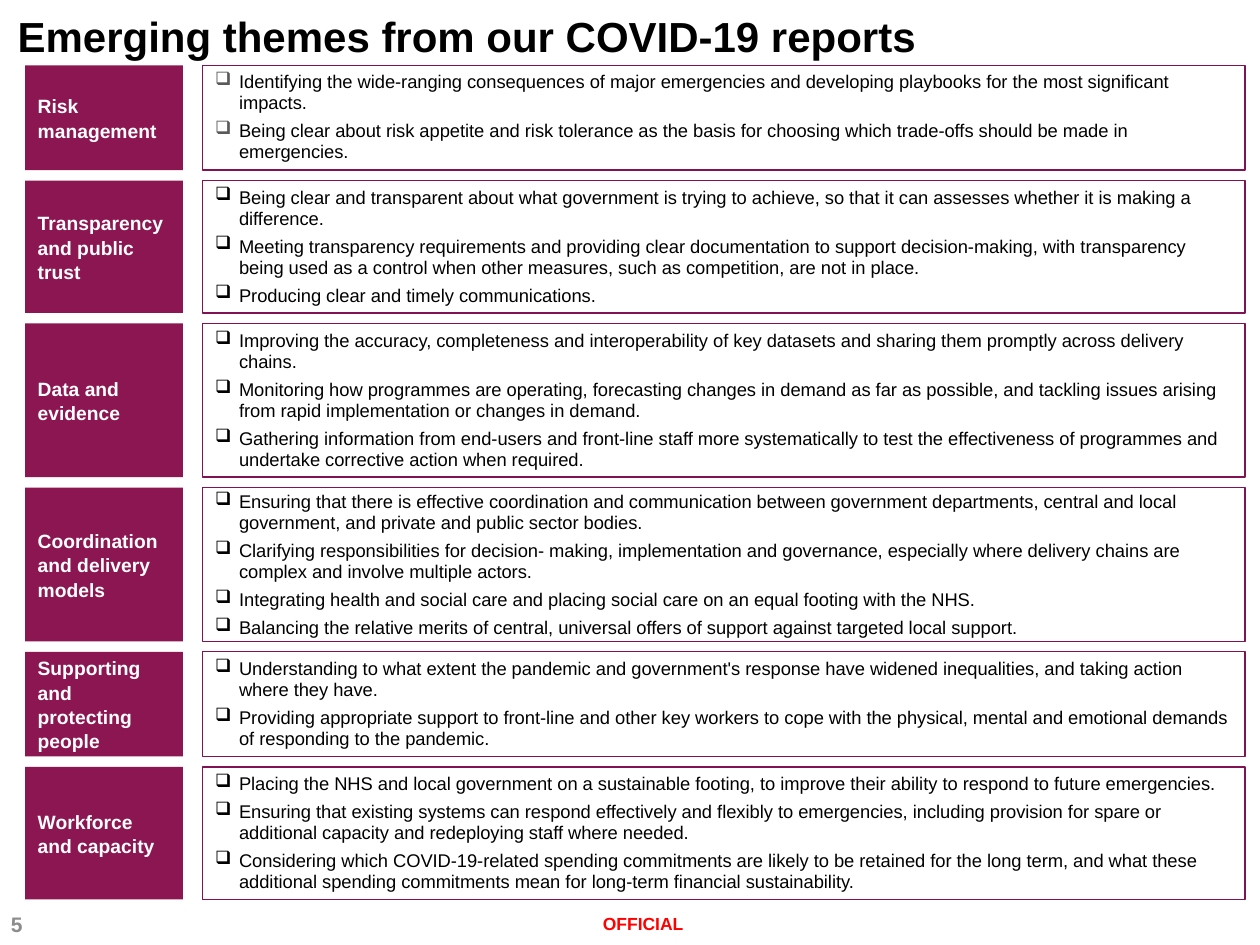
import pptx
import pptx.dml.color
import pptx.enum.shapes
import pptx.enum.text
import pptx.oxml
import pptx.oxml.ns
import pptx.util
from pptx.util import Cm

PLUM = "8C1651"
BORDER = "7F1355"
GREY = "595959"
ANCHOR = pptx.enum.text.MSO_ANCHOR
ALIGN = pptx.enum.text.PP_ALIGN

# Theme, row height in cm, vertical anchor, bullet colour, points
THEMES = [
    ("Risk management", 2.11, ANCHOR.TOP, GREY, [
        "Identifying the wide-ranging consequences of major emergencies and developing playbooks for the most significant impacts.",
        "Being clear about risk appetite and risk tolerance as the basis for choosing which trade-offs should be made in emergencies.",
    ]),
    ("Transparency and public trust", 2.67, ANCHOR.TOP, "000000", [
        "Being clear and transparent about what government is trying to achieve, so that it can assesses whether it is making a difference.",
        "Meeting transparency requirements and providing clear documentation to support decision-making, with transparency being used as a control when other measures, such as competition, are not in place.",
        "Producing clear and timely communications.",
    ]),
    ("Data and evidence", 3.1, ANCHOR.MIDDLE, "000000", [
        "Improving the accuracy, completeness and interoperability of key datasets and sharing them promptly across delivery chains.",
        "Monitoring how programmes are operating, forecasting changes in demand as far as possible, and tackling issues arising from rapid implementation or changes in demand.",
        "Gathering information from end-users and front-line staff more systematically to test the effectiveness of programmes and undertake corrective action when required.",
    ]),
    ("Coordination and delivery models", 3.1, ANCHOR.MIDDLE, "000000", [
        "Ensuring that there is effective coordination and communication between government departments, central and local government, and private and public sector bodies.",
        "Clarifying responsibilities for decision- making, implementation and governance, especially where delivery chains are complex and involve multiple actors.",
        "Integrating health and social care and placing social care on an equal footing with the NHS.",
        "Balancing the relative merits of central, universal offers of support against targeted local support.",
    ]),
    ("Supporting and protecting people", 2.11, ANCHOR.MIDDLE, "000000", [
        "Understanding to what extent the pandemic and government's response have widened inequalities, and taking action where they have.",
        "Providing appropriate support to front-line and other key workers to cope with the physical, mental and emotional demands of responding to the pandemic.",
    ]),
    ("Workforce and capacity", 2.67, ANCHOR.TOP, "000000", [
        "Placing the NHS and local government on a sustainable footing, to improve their ability to respond to future emergencies.",
        "Ensuring that existing systems can respond effectively and flexibly to emergencies, including provision for spare or additional capacity and redeploying staff where needed.",
        "Considering which COVID-19-related spending commitments are likely to be retained for the long term, and what these additional spending commitments mean for long-term financial sustainability.",
    ]),
]


def color(hex_string):
    return pptx.dml.color.RGBColor.from_string(hex_string)


def add_run(paragraph, text, size, hex_string, bold=False):
    run = paragraph.add_run()
    run.text = text
    run.font.name = "Arial"
    run.font.size = pptx.util.Pt(size)
    run.font.bold = bold
    run.font.color.rgb = color(hex_string)


def add_bullet(paragraph, hex_string):
    properties = paragraph._p.get_or_add_pPr()
    properties.set("marL", str(Cm(0.48)))
    properties.set("indent", str(-Cm(0.48)))
    namespace = pptx.oxml.ns.nsdecls("a")
    for xml in (
        f'<a:buClr {namespace}><a:srgbClr val="{hex_string}"/></a:buClr>',
        f'<a:buChar {namespace} char="❑"/>',
    ):
        properties.append(pptx.oxml.parse_xml(xml))


def add_rectangle(slide, left, top, width, height, anchor):
    shape = slide.shapes.add_shape(
        pptx.enum.shapes.MSO_SHAPE.RECTANGLE, Cm(left), Cm(top), Cm(width), Cm(height))
    shape.shadow.inherit = False
    shape.text_frame.word_wrap = True
    shape.text_frame.vertical_anchor = anchor
    return shape


def add_title(slide, left, top, width, height):
    title = slide.shapes.title
    title.left, title.top, title.width, title.height = Cm(left), Cm(top), Cm(width), Cm(height)
    frame = title.text_frame
    frame.auto_size = pptx.enum.text.MSO_AUTO_SIZE.NONE
    frame.vertical_anchor = ANCHOR.TOP
    frame.margin_top = Cm(0.22)
    paragraph = frame.paragraphs[0]
    paragraph.alignment = ALIGN.LEFT
    add_run(paragraph, "Emerging themes from our COVID-19 reports", 24, "000000", bold=True)


def add_theme_label(slide, left, top, width, height, text):
    shape = add_rectangle(slide, left, top, width, height, ANCHOR.MIDDLE)
    shape.fill.solid()
    shape.fill.fore_color.rgb = color(PLUM)
    shape.line.fill.background()
    paragraph = shape.text_frame.paragraphs[0]
    paragraph.alignment = ALIGN.LEFT
    paragraph.line_spacing = 1.05
    add_run(paragraph, text, 11, "FFFFFF", bold=True)


def add_theme_points(slide, left, top, width, height, anchor, bullet_color, points):
    shape = add_rectangle(slide, left, top, width, height, anchor)
    shape.fill.background()
    shape.line.color.rgb = color(BORDER)
    shape.line.width = pptx.util.Pt(0.75)
    frame = shape.text_frame
    for index, point in enumerate(points):
        paragraph = frame.add_paragraph() if index else frame.paragraphs[0]
        add_bullet(paragraph, bullet_color)
        paragraph.alignment = ALIGN.LEFT
        paragraph.line_spacing = pptx.util.Pt(12)
        paragraph.space_before = pptx.util.Pt(2 if index else 0)
        paragraph.space_after = pptx.util.Pt(2)
        add_run(paragraph, point, 10.5, "000000")


def add_themes(slide, left, top, width, label_width=3.18, column_gap=0.4, row_gap=0.21):
    points_left = left + label_width + column_gap
    points_width = width - label_width - column_gap
    for label, height, anchor, bullet_color, points in THEMES:
        add_theme_label(slide, left, top, label_width, height, label)
        add_theme_points(slide, points_left, top, points_width, height,
                         anchor, bullet_color, points)
        top += height + row_gap


def add_footer_text(slide, left, top, width, height, text, size, hex_string, alignment):
    frame = slide.shapes.add_textbox(Cm(left), Cm(top), Cm(width), Cm(height)).text_frame
    frame.word_wrap = True
    frame.vertical_anchor = ANCHOR.MIDDLE
    paragraph = frame.paragraphs[0]
    paragraph.alignment = alignment
    add_run(paragraph, text, size, hex_string, bold=True)


def main():
    presentation = pptx.Presentation()
    presentation.slide_width, presentation.slide_height = Cm(25.4), Cm(19.05)
    slide = presentation.slides.add_slide(presentation.slide_layouts[5])

    add_title(slide, 0.1, 0, 26.2, 2.92)
    add_themes(slide, 0.51, 1.32, 24.59)

    # Footer: slide number and marking
    add_footer_text(slide, -0.03, 18.11, 5.92, 1.02, "5", 12, "8C8C8C", ALIGN.LEFT)
    add_footer_text(slide, 8.94, 18.11, 8.05, 1.02, "OFFICIAL", 10, "FF0000", ALIGN.CENTER)

    presentation.save("out.pptx")


if __name__ == "__main__":
    main()
